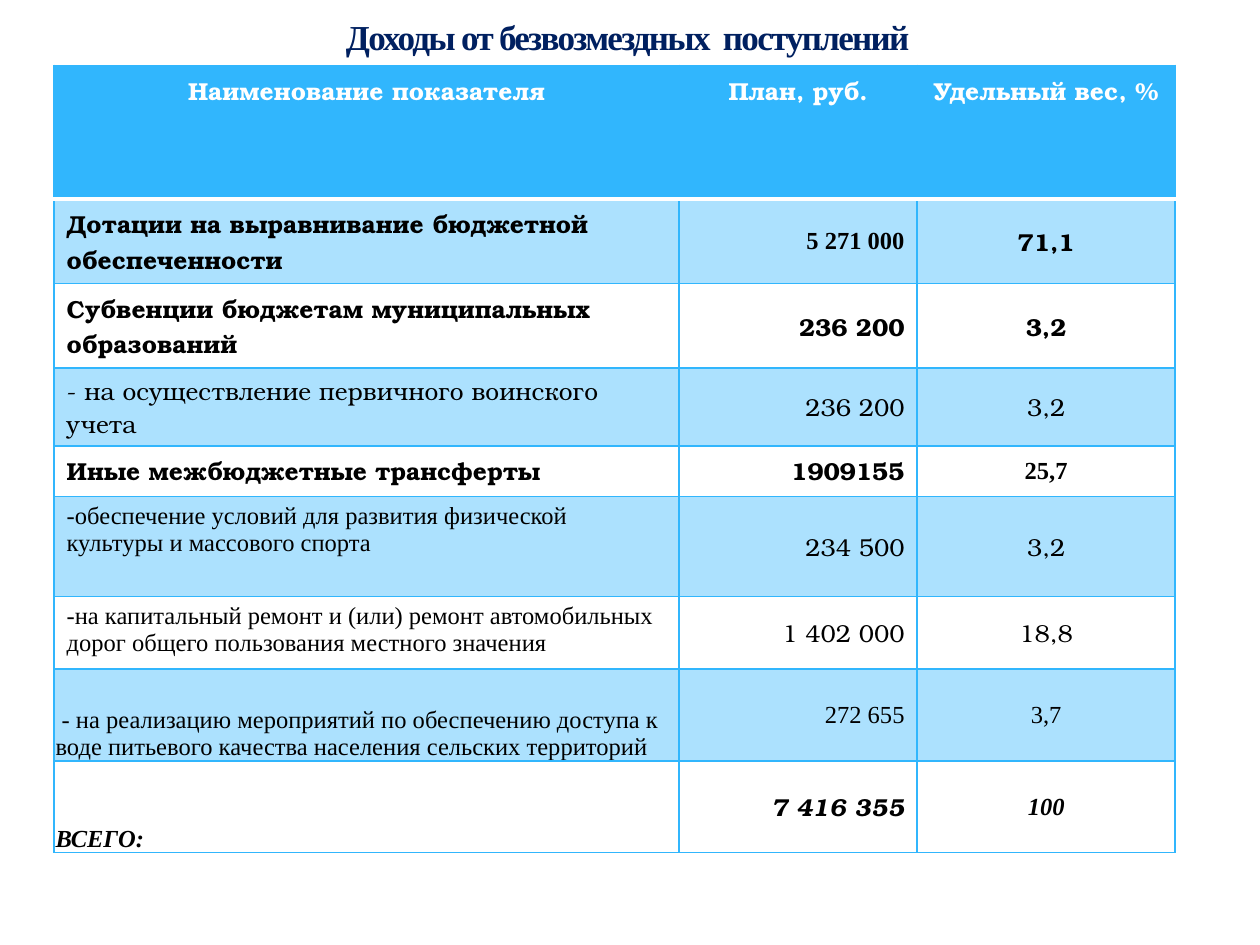
import pptx
import pptx.util
import pptx.dml.color
import pptx.enum.text
import pptx.oxml
import pptx.oxml.ns
from pptx.util import Cm

# Content: text, font, style (b bold, i italic), one tuple per cell
TITLE = "Доходы от безвозмездных  поступлений"
BON, TIM = "TeX Gyre Bonum", "Times New Roman"
HEAD = ["Наименование показателя", "План, руб.", "Удельный вес, %"]
ROWS = [
    ("b", ("Дотации на выравнивание бюджетной обеспеченности", BON),
     ("5 271 000", TIM), ("71,1", BON)),
    ("b", ("Субвенции бюджетам муниципальных образований", BON),
     ("236 200", BON), ("3,2", BON)),
    ("", ("- на осуществление первичного воинского учета", BON),
     ("236 200", BON), ("3,2", BON)),
    ("b", ("Иные межбюджетные трансферты", BON),
     ("1909155", BON), ("25,7", TIM)),
    ("", ("-обеспечение условий для развития физической культуры и массового спорта", TIM),
     ("234 500", BON), ("3,2", BON)),
    ("", ("-на капитальный ремонт и (или) ремонт автомобильных дорог "
          "общего пользования местного значения", TIM),
     ("1 402 000", BON), ("18,8", BON)),
    ("", (" - на реализацию мероприятий по обеспечению доступа к воде "
          "питьевого качества населения сельских территорий", TIM),
     ("272 655", TIM), ("3,7", TIM)),
    ("bi", ("ВСЕГО:", TIM), ("7 416 355", BON), ("100", TIM)),
]
WIDTHS = [12.6, 4.8, 5.2]
HEIGHTS = [2.69, 1.47, 1.47, 1.47, 1.02, 2.01, 1.47, 1.85, 1.85]
BLUE, WHITE, BLACK, NAVY = "31B6FD", "FFFFFF", "000000", "002060"
LOW_ROWS = (7, 8)   # first cell sits at the bottom with thin margins
TOP_CELL = (4, 1)   # the one figure set at the top

ALIGN = pptx.enum.text.PP_ALIGN
ANCHOR = pptx.enum.text.MSO_ANCHOR
NS = pptx.oxml.ns.nsdecls("a")


def hue(code):
    return pptx.dml.color.RGBColor.from_string(code)


def xml(text):
    return pptx.oxml.parse_xml(text)


def write(frame, text, size=14, font=BON, color=BLACK, style="", align=ALIGN.LEFT):
    para = frame.paragraphs[0]
    para.alignment = align
    run = para.add_run()
    run.text = text
    run.font.size = pptx.util.Pt(size)
    run.font.name = font
    run.font.bold = "b" in style
    run.font.italic = "i" in style
    run.font.color.rgb = hue(color)
    return run


def paint(cell, color=None, alpha=100):
    if color is None:
        cell.fill.background()
        return
    cell.fill.solid()
    cell.fill.fore_color.rgb = hue(color)
    if alpha < 100:
        clr = cell.fill._xPr.find(".//" + pptx.oxml.ns.qn("a:srgbClr"))
        clr.append(xml(f'<a:alpha {NS} val="{alpha * 1000}"/>'))


def edge(cell, **sides):
    props = cell._tc.get_or_add_tcPr()
    for spot, side in enumerate("LRTB"):
        color, width = sides.get(side, (BLUE, 1))
        props.insert(spot, xml(
            f'<a:ln{side} {NS} w="{int(width * 12700)}"><a:solidFill>'
            f'<a:srgbClr val="{color}"/></a:solidFill></a:ln{side}>'))


deck = pptx.Presentation()
deck.slide_width, deck.slide_height = Cm(25.4), Cm(19.05)
slide = deck.slides.add_slide(deck.slide_layouts[5])

# Title with a faint outline
title = slide.shapes.title
title.left, title.top, title.width, title.height = Cm(2.9), Cm(0), Cm(19.5), Cm(1.47)
title.text_frame.word_wrap = True
title.text_frame.vertical_anchor = ANCHOR.MIDDLE
run = write(title.text_frame, TITLE, size=20, font=TIM, color=NAVY,
            style="b", align=ALIGN.CENTER)
props = run.font._element
props.set("spc", "-100")
props.insert(0, xml(
    f'<a:ln {NS} w="3175"><a:solidFill><a:srgbClr val="AFCCDE">'
    '<a:alpha val="25000"/></a:srgbClr></a:solidFill></a:ln>'))

# Table grid
table = slide.shapes.add_table(
    len(HEIGHTS), len(WIDTHS), Cm(1.09), Cm(1.32),
    Cm(sum(WIDTHS)), Cm(sum(HEIGHTS))).table
for col, width in zip(table.columns, WIDTHS):
    col.width = Cm(width)
for row, height in zip(table.rows, HEIGHTS):
    row.height = Cm(height)

# Header row
for c, text in enumerate(HEAD):
    cell = table.cell(0, c)
    write(cell.text_frame, text, color=WHITE, style="b", align=ALIGN.CENTER)
    paint(cell, BLUE)
    edge(cell, B=(WHITE, 3))

# Body rows, every other one tinted
for r, (style, *cells) in enumerate(ROWS, 1):
    for c, (text, font) in enumerate(cells):
        cell = table.cell(r, c)
        write(cell.text_frame, text, font=font, style=style,
              align=(ALIGN.LEFT, ALIGN.RIGHT, ALIGN.CENTER)[c])
        if c and (r, c) != TOP_CELL:
            cell.vertical_anchor = ANCHOR.MIDDLE
        elif c == 0 and r in LOW_ROWS:
            cell.vertical_anchor = ANCHOR.BOTTOM
            cell.margin_left = cell.margin_right = cell.margin_top = Cm(0.03)
            cell.margin_bottom = 0
        if r % 2:
            paint(cell, BLUE, alpha=40)
        else:
            paint(cell)
        edge(cell, **({"T": (WHITE, 3)} if r == 1 else {}))

deck.save("out.pptx")
